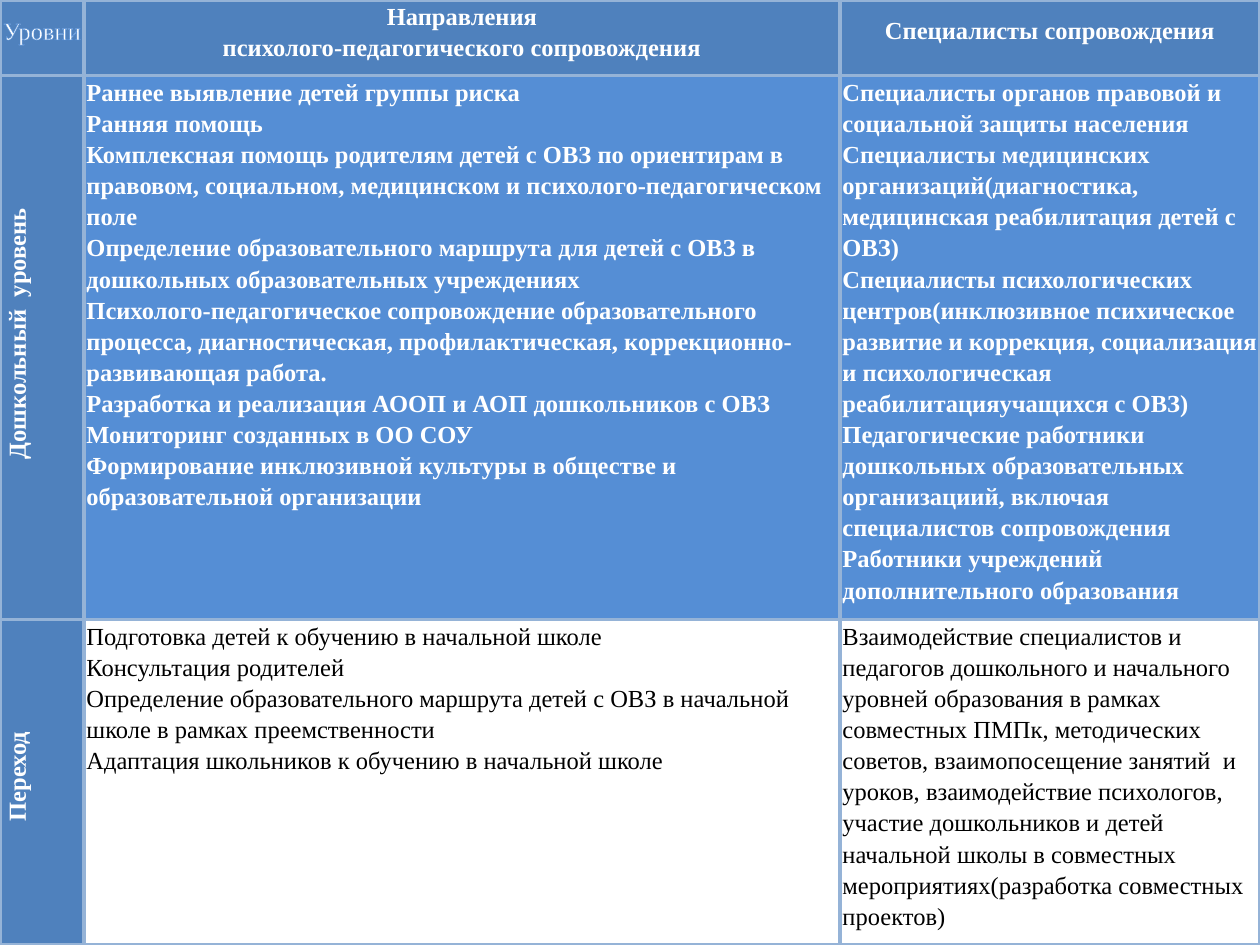
"""Build a one-slide table of support levels, directions and specialists."""
from dataclasses import dataclass

import lxml.etree as etree
import pptx
import pptx.dml.color
import pptx.enum.text
import pptx.oxml.ns
import pptx.table
import pptx.util

Pt = pptx.util.Pt
qn = pptx.oxml.ns.qn

COLORS = {
    "head": "4F81BD",
    "preschool": "558ED5",
    "transition": "FFFFFF",
    "border": "95B3D7",
    "light": "FFFFFF",
    "dark": "000000",
}
FONT = "Times New Roman"
COLUMN_WIDTHS = (48, 432, 240)
ROW_HEIGHTS = (43.2, 310.8, 186)
SIDE_MARGIN = 1.4


@dataclass(frozen=True)
class Entry:
    """Content and look of one table cell."""

    paragraphs: tuple[str, ...]
    fill: str = "head"
    color: str = "light"
    bold: bool = True
    centered: bool = True
    rotated: bool = False
    outlined: bool = False
    left: float = SIDE_MARGIN
    top: float = 0


def preschool(*paragraphs: str) -> Entry:
    """Describe a body cell of the preschool level."""
    return Entry(paragraphs, fill="preschool", centered=False)


def transition(*paragraphs: str) -> Entry:
    """Describe a body cell of the transition level."""
    return Entry(paragraphs, fill="transition", color="dark", bold=False, centered=False)


LEVELS = (
    (
        Entry(("Уровни",), bold=False, outlined=True, top=8),
        Entry(("Направления", "психолого-педагогического сопровождения")),
        Entry(("Специалисты сопровождения",), top=8),
    ),
    (
        Entry(("Дошкольный  уровень",), rotated=True, left=17),
        preschool(
            "Раннее выявление детей группы риска",
            "Ранняя помощь",
            "Комплексная помощь родителям детей с ОВЗ по ориентирам в правовом, "
            "социальном, медицинском и психолого-педагогическом поле",
            "Определение образовательного маршрута для детей с ОВЗ в дошкольных "
            "образовательных учреждениях",
            "Психолого-педагогическое сопровождение образовательного процесса, "
            "диагностическая, профилактическая, коррекционно-развивающая работа.",
            "Разработка и реализация АООП и АОП дошкольников с ОВЗ",
            "Мониторинг созданных в ОО СОУ",
            "Формирование инклюзивной культуры в обществе и образовательной организации",
        ),
        preschool(
            "Специалисты органов правовой и социальной защиты населения",
            "Специалисты медицинских организаций(диагностика, медицинская "
            "реабилитация детей с ОВЗ)",
            "Специалисты психологических центров(инклюзивное психическое развитие и "
            "коррекция, социализация и психологическая реабилитацияучащихся с ОВЗ)",
            "Педагогические работники дошкольных образовательных организациий, "
            "включая специалистов сопровождения",
            "Работники учреждений дополнительного образования",
        ),
    ),
    (
        Entry(("Переход",), rotated=True, left=8),
        transition(
            "Подготовка детей к обучению в начальной школе",
            "Консультация родителей",
            "Определение образовательного маршрута детей с ОВЗ в начальной школе "
            "в рамках преемственности",
            "Адаптация школьников к обучению в начальной школе",
        ),
        transition(
            "Взаимодействие специалистов и педагогов дошкольного и начального уровней "
            "образования в рамках совместных ПМПк, методических советов, "
            "взаимопосещение занятий  и уроков, взаимодействие психологов, участие "
            "дошкольников и детей начальной школы в совместных "
            "мероприятиях(разработка совместных проектов)",
        ),
    ),
)


def rgb(name: str) -> pptx.dml.color.RGBColor:
    """Look up a named colour."""
    return pptx.dml.color.RGBColor.from_string(COLORS[name])


def make_line(tag: str, width: float, color: str) -> etree.ElementBase:
    """Make a solid line element with the given tag."""
    line = pptx.oxml.parse_xml(
        f'<a:{tag} {pptx.oxml.ns.nsdecls("a")} w="{Pt(width)}"/>'
    )
    solid = etree.SubElement(line, qn("a:solidFill"))
    etree.SubElement(solid, qn("a:srgbClr"), val=COLORS[color])
    return line


def draw_entry(cell: pptx.table._Cell, entry: Entry) -> None:
    """Write one entry into its cell."""
    properties = cell._tc.get_or_add_tcPr()
    for side in "LRTB":
        properties.append(make_line(f"ln{side}", 2.25, "border"))
    if entry.rotated:
        properties.set("vert", "vert270")
    cell.fill.solid()
    cell.fill.fore_color.rgb = rgb(entry.fill)
    cell.margin_left, cell.margin_right = Pt(entry.left), Pt(SIDE_MARGIN)
    cell.margin_top, cell.margin_bottom = Pt(entry.top), Pt(0)
    cell.text_frame.text = "\n".join(entry.paragraphs)
    align = pptx.enum.text.PP_ALIGN
    for paragraph in cell.text_frame.paragraphs:
        paragraph.alignment = align.CENTER if entry.centered else align.LEFT
        paragraph.line_spacing = 1.15
        paragraph.font.name = FONT
        paragraph.font.size = Pt(14)
        paragraph.font.bold = entry.bold
        paragraph.font.color.rgb = rgb(entry.color)
        if entry.outlined:
            for run in paragraph.runs:
                run._r.get_or_add_rPr().insert(0, make_line("ln", 0.75, "preschool"))


def main() -> None:
    """Build and save the presentation."""
    presentation = pptx.Presentation()
    presentation.slide_width, presentation.slide_height = Pt(720), Pt(540)
    slide = presentation.slides.add_slide(presentation.slide_layouts[6])
    levels_table = slide.shapes.add_table(
        len(ROW_HEIGHTS), len(COLUMN_WIDTHS), Pt(0), Pt(0),
        Pt(sum(COLUMN_WIDTHS)), Pt(sum(ROW_HEIGHTS)),
    ).table
    levels_table.first_row = False
    levels_table.horz_banding = False
    for column, width in zip(levels_table.columns, COLUMN_WIDTHS):
        column.width = Pt(width)
    for row, height, level in zip(levels_table.rows, ROW_HEIGHTS, LEVELS):
        row.height = Pt(height)
        for cell, entry in zip(row.cells, level):
            draw_entry(cell, entry)
    presentation.save("out.pptx")


if __name__ == "__main__":
    main()
